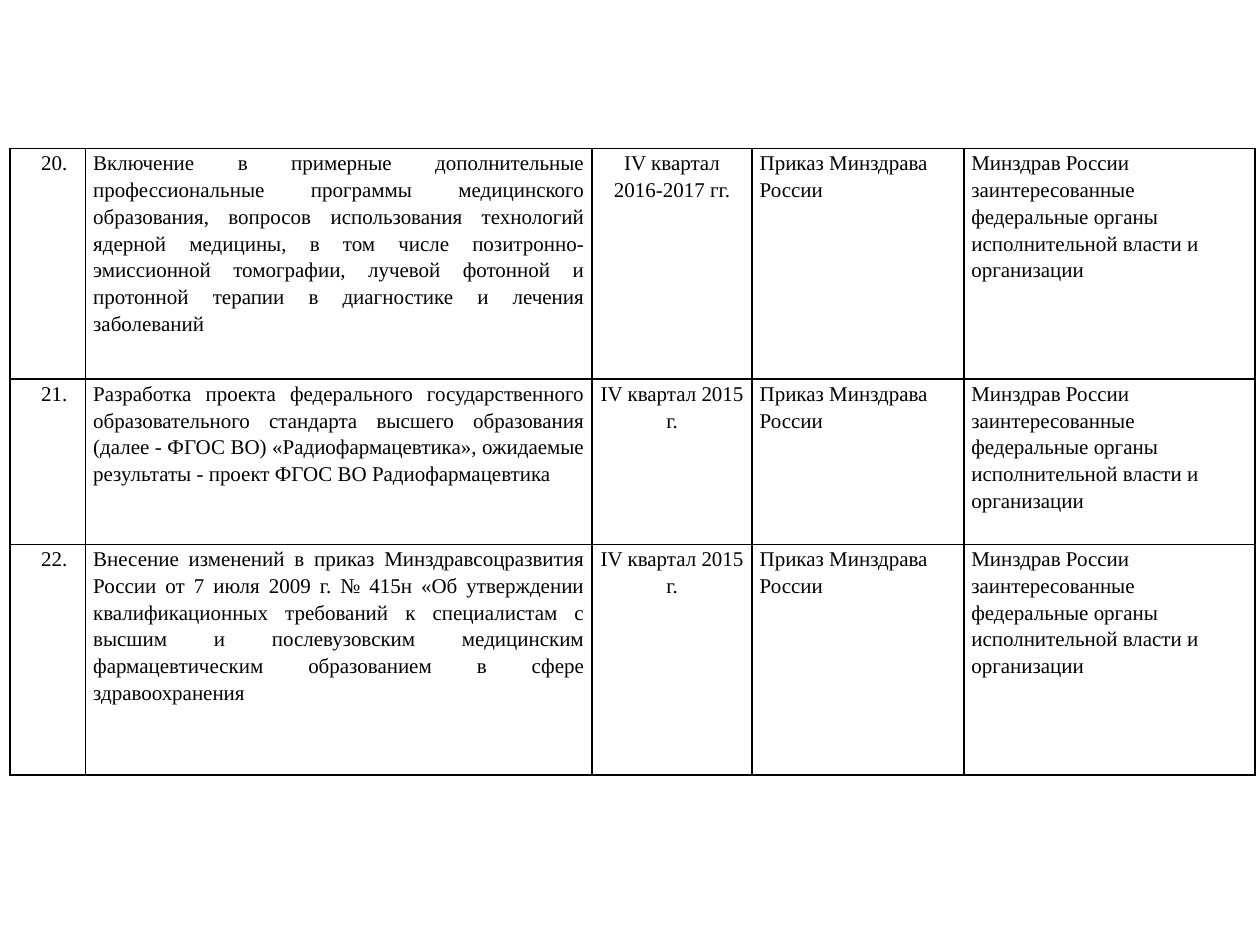
from dataclasses import dataclass

from lxml import etree
from pptx import Presentation
from pptx.dml.color import RGBColor
from pptx.enum.text import PP_ALIGN
from pptx.oxml.ns import qn
from pptx.util import Inches, Pt

LEFT, CENTER, JUSTIFY = PP_ALIGN.LEFT, PP_ALIGN.CENTER, PP_ALIGN.JUSTIFY
BLANK_LAYOUT = 6


@dataclass(frozen=True)
class Theme:
    font: str = "Times New Roman"
    size: int = 12
    text: str = "000000"
    fill: str = "FFFFFF"
    border: str = "000000"
    border_width: int = 1
    line_spacing: float = 1.15


THEME = Theme()

# Table geometry and column formatting
TABLE_LEFT, TABLE_TOP = 0.08, 1.18
COL_WIDTHS = [0.6, 4.02, 1.27, 1.68, 2.31]
ROW_HEIGHTS = [1.83, 1.31, 1.83]
COL_ALIGNS = [CENTER, JUSTIFY, CENTER, LEFT, LEFT]
COL_INDENTS = [0.1, 0, 0, 0, 0]

# Plan items: number, measure, deadline
ITEMS = [
    ("20.",
     "Включение в примерные дополнительные профессиональные программы "
     "медицинского образования, вопросов использования технологий ядерной "
     "медицины, в том числе позитронно-эмиссионной томографии, лучевой "
     "фотонной и протонной терапии в диагностике и лечения заболеваний",
     "IV квартал 2016-2017 гг."),
    ("21.",
     "Разработка проекта федерального государственного образовательного "
     "стандарта высшего образования (далее - ФГОС ВО) «Радиофармацевтика», "
     "ожидаемые результаты - проект ФГОС ВО Радиофармацевтика",
     "IV квартал 2015 г."),
    ("22.",
     "Внесение изменений в приказ Минздравсоцразвития России от 7 июля "
     "2009 г. № 415н «Об утверждении квалификационных требований к "
     "специалистам с высшим и послевузовским медицинским фармацевтическим "
     "образованием в сфере здравоохранения",
     "IV квартал 2015 г."),
]

# Columns that are the same for every item
DOCUMENT = "Приказ Минздрава России"
EXECUTORS = ("Минздрав России\n"
             "заинтересованные федеральные органы исполнительной власти "
             "и организации")


def set_borders(cell):
    tc_pr = cell._tc.get_or_add_tcPr()
    for side in ("a:lnL", "a:lnR", "a:lnT", "a:lnB"):
        ln = etree.SubElement(tc_pr, qn(side), w=str(Pt(THEME.border_width)))
        fill = etree.SubElement(ln, qn("a:solidFill"))
        etree.SubElement(fill, qn("a:srgbClr"), val=THEME.border)


def style_cell(cell):
    set_borders(cell)
    cell.fill.solid()
    cell.fill.fore_color.rgb = RGBColor.from_string(THEME.fill)
    cell.margin_left = cell.margin_right = Inches(0.06)
    cell.margin_top = cell.margin_bottom = 0


def write_cell(cell, text, align, indent):
    tf = cell.text_frame
    for i, line in enumerate(text.split("\n")):
        p = tf.add_paragraph() if i else tf.paragraphs[0]
        p.alignment = align
        p.line_spacing = THEME.line_spacing
        if indent:
            p._p.get_or_add_pPr().set("marL", str(Inches(indent)))
        r = p.add_run()
        r.text = line
        r.font.name = THEME.font
        r.font.size = Pt(THEME.size)
        r.font.color.rgb = RGBColor.from_string(THEME.text)


def add_plan_table(slide):
    table = slide.shapes.add_table(
        len(ITEMS), len(COL_WIDTHS), Inches(TABLE_LEFT), Inches(TABLE_TOP),
        Inches(sum(COL_WIDTHS)), Inches(sum(ROW_HEIGHTS))).table
    table.first_row = table.horz_banding = False
    for col, width in zip(table.columns, COL_WIDTHS):
        col.width = Inches(width)
    for row, height, item in zip(table.rows, ROW_HEIGHTS, ITEMS):
        row.height = Inches(height)
        texts = (*item, DOCUMENT, EXECUTORS)
        for cell, text, align, indent in zip(
                row.cells, texts, COL_ALIGNS, COL_INDENTS):
            style_cell(cell)
            write_cell(cell, text, align, indent)


def main():
    prs = Presentation()
    prs.slide_width, prs.slide_height = Inches(10), Inches(7.5)
    slide = prs.slides.add_slide(prs.slide_layouts[BLANK_LAYOUT])
    add_plan_table(slide)
    prs.save("out.pptx")


if __name__ == "__main__":
    main()
